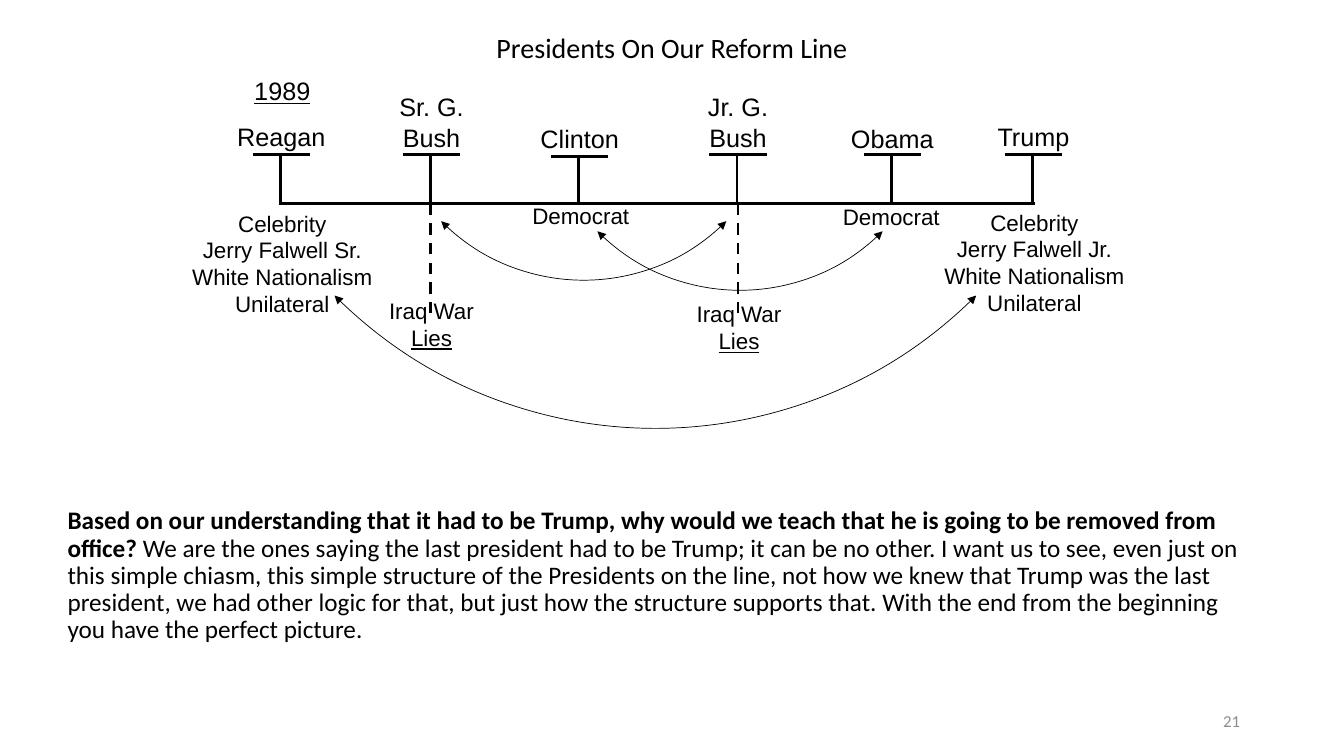
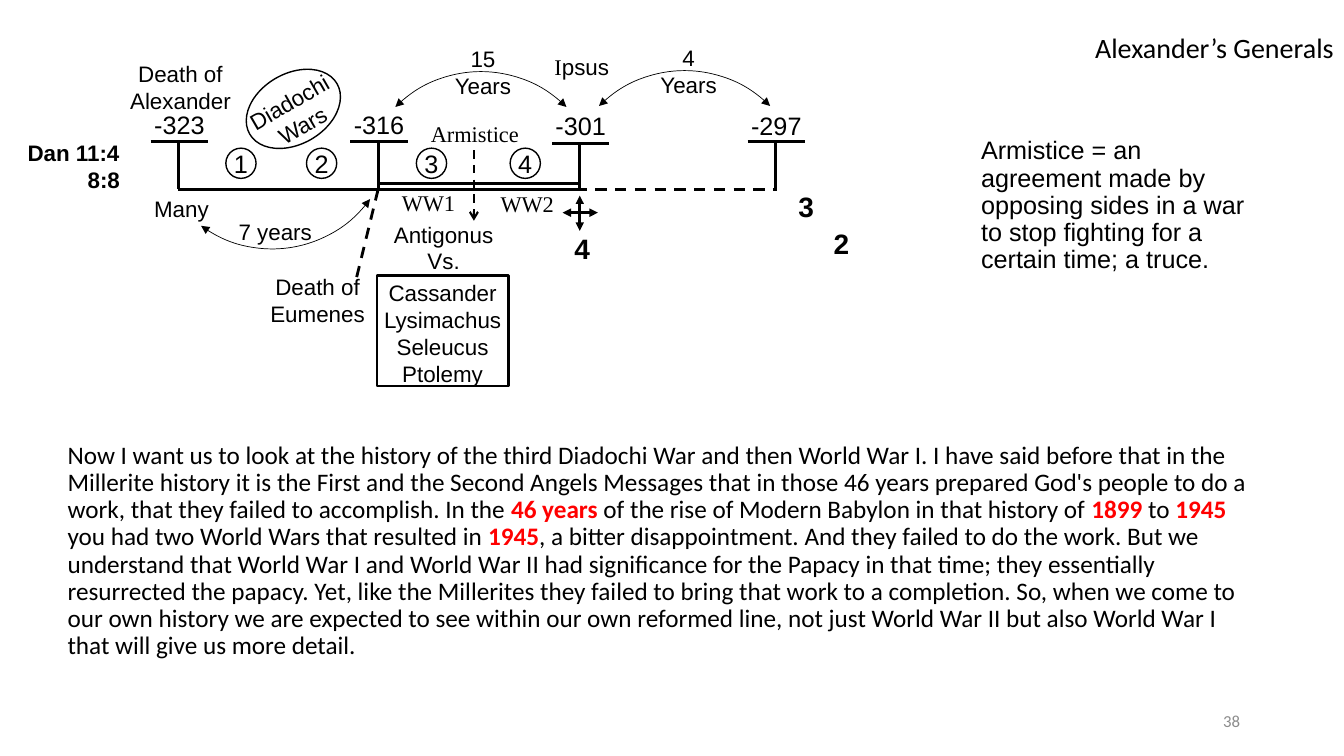
from dataclasses import dataclass
from typing import Any, Optional

from lxml import etree
from pptx import Presentation
from pptx import util as u
from pptx.dml import color
from pptx.enum import dml, shapes, text
from pptx.oxml import ns

BLACK, RED, GREY = "000000", "FF0000", "8C8C8C"
SANS, BODY, SERIF = "Arial", "Calibri", "Times New Roman"
CENTER, LEFT, RIGHT = text.PP_ALIGN.CENTER, text.PP_ALIGN.LEFT, text.PP_ALIGN.RIGHT
TOP, MIDDLE = text.MSO_ANCHOR.TOP, text.MSO_ANCHOR.MIDDLE
INSET = 0.04
CAP_WIDTH = 0.57
BOTH_ENDS = ("triangle", "triangle")
Box = tuple[float, float, float, float]


@dataclass(frozen=True)
class Run:
    """A piece of text with one look."""
    text: str
    size: float = 16
    font: str = SANS
    color: str = BLACK
    bold: bool = False
    underline: bool = False


@dataclass(frozen=True)
class Para:
    """A paragraph made of runs."""
    runs: tuple[Run, ...]
    align: Any = CENTER
    spacing: Any = None
    before: float = 0


@dataclass(frozen=True)
class Note:
    """A free text box of the diagram."""
    box: Box
    paras: tuple[Para, ...]
    rotation: float = 0


@dataclass(frozen=True)
class Tick:
    """A labelled waymark standing on a time line."""
    x: float
    y: float
    label: str
    label_top: float


@dataclass(frozen=True)
class Line:
    """A straight line with optional dashes and arrowheads."""
    start: tuple[float, float]
    end: tuple[float, float]
    width: float = 2
    dashed: bool = False
    ends: tuple[Optional[str], Optional[str]] = (None, None)


@dataclass(frozen=True)
class Arc:
    """A double-headed quarter circle, hanging below or rising above its centre."""
    cx: float
    cy: float
    radius: float
    rotation: float = 45
    hanging: bool = True


def rgb(value: str) -> color.RGBColor:
    """Turn a hex string into a colour."""
    return color.RGBColor.from_string(value)


def lines(*texts: str, **look: Any) -> tuple[Para, ...]:
    """Make one centred paragraph for each text."""
    return tuple(Para((Run(t, **look),)) for t in texts)


def place(sp: Any, box: Box) -> None:
    """Move and size a shape in inches."""
    sp.left, sp.top, sp.width, sp.height = map(u.Inches, box)


def write(tf: Any, paras: tuple[Para, ...], anchor: Any = TOP,
          inset: Optional[float] = INSET, wrap: bool = True) -> None:
    """Fill a text frame run by run."""
    tf.word_wrap = wrap
    tf.auto_size = text.MSO_AUTO_SIZE.NONE
    tf.vertical_anchor = anchor
    if inset is not None:
        tf.margin_left = tf.margin_right = tf.margin_top = tf.margin_bottom = u.Inches(inset)
    for i, para in enumerate(paras):
        p = tf.add_paragraph() if i else tf.paragraphs[0]
        p.alignment = para.align
        p.space_before = u.Pt(para.before)
        if para.spacing is not None:
            p.line_spacing = para.spacing
        for run in para.runs:
            r = p.add_run()
            r.text = run.text
            f = r.font
            f.size, f.name = u.Pt(run.size), run.font
            f.bold, f.underline = run.bold, run.underline
            f.color.rgb = rgb(run.color)


def add_note(s: Any, note: Note) -> None:
    """Draw a text box."""
    sp = s.shapes.add_textbox(*map(u.Inches, note.box))
    sp.rotation = note.rotation
    write(sp.text_frame, note.paras)


def add_ends(sp: Any, ends: tuple[Optional[str], Optional[str]]) -> None:
    """Put arrowheads on a line."""
    ln = sp.element.spPr.find(ns.qn("a:ln"))
    for tag, kind in zip(("a:headEnd", "a:tailEnd"), ends):
        if kind:
            etree.SubElement(ln, ns.qn(tag), type=kind)


def add_line(s: Any, line: Line) -> None:
    """Draw a straight connector without shadow."""
    sp = s.shapes.add_connector(shapes.MSO_CONNECTOR.STRAIGHT,
                                *map(u.Inches, line.start + line.end))
    sp.line.color.rgb = rgb(BLACK)
    sp.line.width = u.Pt(line.width)
    if line.dashed:
        sp.line.dash_style = dml.MSO_LINE.DASH
    add_ends(sp, line.ends)
    etree.SubElement(sp.element.spPr, ns.qn("a:effectLst"))


def add_outline(s: Any, kind: Any, box: Box, width: float, rotation: float = 0) -> Any:
    """Draw an unfilled preset shape."""
    sp = s.shapes.add_shape(kind, *map(u.Inches, box))
    sp.shadow.inherit = False
    sp.fill.background()
    sp.line.color.rgb = rgb(BLACK)
    sp.line.width = u.Pt(width)
    sp.rotation = rotation
    return sp


def add_arc(s: Any, arc: Arc) -> None:
    """Draw a double-headed arc."""
    d = 2 * arc.radius
    box = (arc.cx - arc.radius, arc.cy - arc.radius, d, d)
    sp = add_outline(s, shapes.MSO_SHAPE.ARC, box, 0.5, arc.rotation)
    if arc.hanging:
        sp.element.spPr.find(ns.qn("a:xfrm")).set("flipV", "1")
    add_ends(sp, BOTH_ENDS)


def add_tick(s: Any, tick: Tick, base: float) -> None:
    """Draw a waymark: cap, stem and label."""
    mid = tick.x + 0.01
    add_line(s, Line((mid - CAP_WIDTH / 2, tick.y), (mid + CAP_WIDTH / 2, tick.y)))
    add_line(s, Line((tick.x, tick.y), (tick.x, base)))
    add_note(s, Note((mid - 0.5, tick.label_top, 1, 0.4), lines(tick.label, size=18)))


def fill_body(sp: Any, box: Box, runs: tuple[Run, ...]) -> None:
    """Set a body placeholder as plain text without bullets."""
    place(sp, box)
    write(sp.text_frame, (Para(runs, LEFT, 0.9, 10),), inset=None)
    pPr = sp.text_frame.paragraphs[0]._p.get_or_add_pPr()
    pPr.set("marL", "0")
    pPr.set("indent", "0")
    etree.SubElement(pPr, ns.qn("a:buNone"))


def add_page(prs: Any, layout: int, title: str, align: Any, number: str) -> Any:
    """Add a slide with the shared title and number styles."""
    s = prs.slides.add_slide(prs.slide_layouts[layout])
    place(s.shapes.title, (0, 0.24, 13.33, 0.5))
    heading = Para((Run(title, 20, BODY),), align, 0.9)
    write(s.shapes.title.text_frame, (heading,), MIDDLE, None)
    sp = s.shapes.add_textbox(*map(u.Inches, (9.4, 6.95, 3, 0.4)))
    write(sp.text_frame, (Para((Run(number, 12, BODY, GREY),), RIGHT),), MIDDLE, None)
    return s


def draw(s: Any, base: float, ticks: tuple[Tick, ...], *items: Any) -> None:
    """Draw the waymarks and the other parts of a diagram."""
    painters = {Line: add_line, Note: add_note, Arc: add_arc}
    for tick in ticks:
        add_tick(s, tick, base)
    for item in items:
        painters[type(item)](s, item)


def presidents(prs: Any) -> None:
    """Build the slide on the line of presidents."""
    s = add_page(prs, 1, "Presidents On Our Reform Line", CENTER, "21")
    fill_body(s.placeholders[1], (0.57, 4.99, 12.05, 1.96), (
        Run("Based on our understanding that it had to be Trump, why would we teach that he is going to be removed from office?", 18, BODY, bold=True),
        Run(" We are the ones saying the last president had to be Trump; it can be no other. I want us to see, even just on this simple chiasm, this simple structure of the Presidents on the line, not how we knew that Trump was the last president, we had other logic for that, but just how the structure supports that. With the end from the beginning you have the perfect picture.", 18, BODY)))
    base = 2.02
    ticks = (Tick(2.78, 1.53, "Reagan", 1.16), Tick(4.27, 1.53, "Sr. G. Bush", 0.87),
             Tick(5.74, 1.55, "Clinton", 1.18), Tick(7.31, 1.53, "Jr. G. Bush", 0.87),
             Tick(8.84, 1.53, "Obama", 1.18), Tick(10.24, 1.53, "Trump", 1.16))
    draw(s, base, ticks, Line((2.77, base), (10.27, base)),
         Note((2.47, 0.71, 0.66, 0.36), lines("1989", size=18, underline=True)),
         Arc(5.79, 0.78, 2), Arc(7.34, 0.88, 2), Arc(6.5, -0.25, 4.5))
    for x, y in ((5.22, 1.97), (8.3, 1.98)):
        add_note(s, Note((x, y, 1.08, 0.36), lines("Democrat")))
    for x, y, suffix in ((1.85, 2.04, "Sr."), (9.31, 2.03, "Jr.")):
        traits = lines("Celebrity", f"Jerry Falwell {suffix}", "White Nationalism", "Unilateral")
        add_note(s, Note((x, y, 1.9, 1.1), traits))
    for x, y in ((4.27, 2.91), (7.32, 2.94)):
        add_line(s, Line((x, base), (x, 3.12), dashed=True))
        war = lines("Iraq War") + lines("Lies", underline=True)
        add_note(s, Note((x - 0.49, y, 1, 0.6), war))


def generals(prs: Any) -> None:
    """Build the slide on the line of generals."""
    s = add_page(prs, 3, "Alexander’s Generals", RIGHT, "38")
    plain = {"size": 18, "font": BODY}
    red = {**plain, "color": RED, "bold": True}
    fill_body(s.placeholders[1], (0.57, 4.34, 12.05, 2.67), (
        Run("Now I want us to look at the history of the third Diadochi War and then World War I. I have said before that in the Millerite history it is the First and the Second Angels Messages that in those 46 years prepared God's people to do a work, that they failed to accomplish. In the ", **plain),
        Run("46 years", **red),
        Run(" of the rise of Modern Babylon in that history of ", **plain),
        Run("1899", **red), Run(" to ", **plain), Run("1945", **red),
        Run(" you had two World Wars that resulted in ", **plain),
        Run("1945", **red),
        Run(", a bitter disappointment. And they failed to do the work. But we understand that World War I and World War II had significance for the Papacy in that time; they essentially resurrected the papacy. Yet, like the Millerites they failed to bring that work to a completion. So, when we come to our own history we are expected to see within our own reformed line, not just World War II but also World War I that will give us more detail.", **plain)))
    fill_body(s.placeholders[2], (9.63, 1.32, 2.82, 1.29), (
        Run("Armistice = an agreement made by opposing sides in a war to stop fighting for a certain time; a truce.", 18),))
    base = 1.88
    ticks = (Tick(1.77, 1.4, "-323", 1.04), Tick(3.75, 1.4, "-316", 1.04),
             Tick(5.75, 1.42, "-301", 1.05), Tick(7.69, 1.4, "-297", 1.05))
    big = {"size": 20, "bold": True}
    serif = {"font": SERIF}
    draw(s, base, ticks,
         Line((1.77, base), (5.77, base)),
         Line((5.71, base), (7.71, base), dashed=True),
         Line((3.75, 1.82), (5.75, 1.82)),
         Line((3.75, base), (3.53, 2.78), dashed=True),
         Line((4.7, 1.49), (4.7, 2.19), 1.5, True, (None, "arrow")),
         Line((5.75, 1.94), (5.75, 2.29), ends=BOTH_ENDS),
         Line((5.93, 2.11), (5.58, 2.11), ends=BOTH_ENDS),
         Arc(4.77, 1.91, 1.2, 315, False), Arc(6.79, 1.9, 1.2, 315, False),
         Arc(2.7, 1.27, 1.2, 36),
         Note((1.45, 1.9, 0.7, 0.36), lines("Many")),
         Note((1.24, 0.56, 1.1, 0.6), lines("Death of Alexander")),
         Note((2.6, 2.67, 1.1, 0.6), lines("Death of Eumenes")),
         Note((3.75, 2.15, 1.3, 0.6), lines("Antigonus", "Vs.")),
         Note((4.44, 0.41, 0.7, 0.6), lines("15 Years")),
         Note((6.48, 0.4, 0.7, 0.6), lines("4 Years")),
         Note((5.42, 0.49, 0.7, 0.4), (Para((Run("I", font=SERIF), Run("psus"))),)),
         Note((0.23, 1.34, 1, 0.6), lines("Dan 11:4", bold=True)
              + (Para((Run("8:8", bold=True),), RIGHT),)),
         Note((2.28, 2.17, 0.9, 0.3), (Para((Run("7 years"),), spacing=u.Pt(16)),)),
         Note((2.43, 0.82, 1, 0.6), lines("Diadochi Wars"), 330),
         Note((4.21, 1.15, 1, 0.3), lines("Armistice", **serif)),
         Note((3.9, 1.84, 0.7, 0.3), lines("WW1", **serif)),
         Note((4.88, 1.85, 0.7, 0.3), lines("WW2", **serif)),
         Note((7.87, 1.84, 0.25, 0.4), lines("3", **big)),
         Note((5.65, 2.26, 0.25, 0.4), lines("4", **big)),
         Note((8.22, 2.21, 0.25, 0.4), lines("2", **big)))
    oval = shapes.MSO_SHAPE.OVAL
    add_outline(s, oval, (2.41, 0.73, 1, 0.7), 1, 330)
    for war, x in enumerate((2.24, 3.04, 4.13, 5.06), 1):
        sp = add_outline(s, oval, (x, 1.47, 0.3, 0.3), 1)
        write(sp.text_frame, lines(str(war), size=18), MIDDLE, 0, False)
    sp = add_outline(s, shapes.MSO_SHAPE.RECTANGLE, (3.74, 2.73, 1.3, 1.1), 2)
    write(sp.text_frame, lines("Cassander", "Lysimachus", "Seleucus", "Ptolemy"))


def main() -> None:
    """Build and save the presentation."""
    prs = Presentation()
    prs.slide_width, prs.slide_height = u.Inches(13.33), u.Inches(7.5)
    presidents(prs)
    generals(prs)
    prs.save("out.pptx")


if __name__ == "__main__":
    main()
